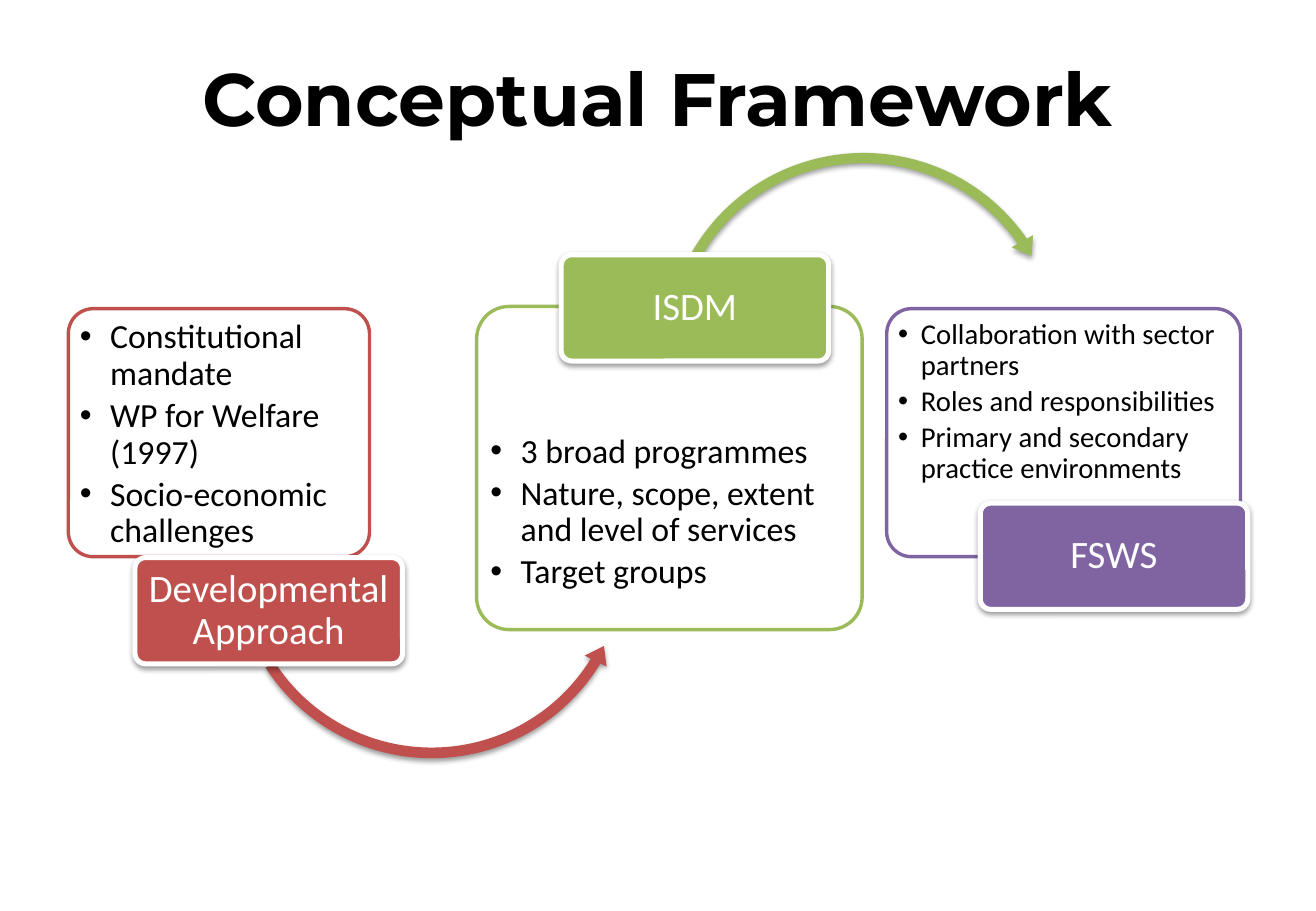
"""Build the Conceptual Framework slide: three linked stages with labels and arrows."""
import pptx
import pptx.dml.color
import pptx.enum.shapes
import pptx.enum.text
import pptx.oxml
import pptx.util

Pt = pptx.util.Pt
MSO = pptx.enum.shapes.MSO_SHAPE
ALIGN = pptx.enum.text.PP_ALIGN
ANCHOR = pptx.enum.text.MSO_ANCHOR
RGB = pptx.dml.color.RGBColor.from_string
NS = 'xmlns:a="http://schemas.openxmlformats.org/drawingml/2006/main"'
SHADOW = (f'<a:outerShdw {NS} blurRad="40000" dist="20000" dir="5400000" rotWithShape="0">'
          '<a:srgbClr val="000000"><a:alpha val="38000"/></a:srgbClr></a:outerShdw>')


def add_text(sp, text, size, color="000000", font="Calibri", bold=False, align=ALIGN.CENTER,
             anchor=ANCHOR.MIDDLE, insets=(3.5, 2.3, 3.5, 2.3), spacing=0.9, after=0, indent=0):
    tf = sp.text_frame
    tf.word_wrap = True
    tf.vertical_anchor = anchor
    tf.margin_left, tf.margin_top, tf.margin_right, tf.margin_bottom = map(Pt, insets)
    for i, line in enumerate(text.split("\n")):
        p = tf.paragraphs[0] if i == 0 else tf.add_paragraph()
        p.alignment = align
        p.line_spacing = spacing
        p.space_after = Pt(after)
        if indent:
            pPr = p._p.get_or_add_pPr()
            pPr.set("marL", str(Pt(indent)))
            pPr.set("indent", str(-Pt(indent)))
            pPr.append(pptx.oxml.parse_xml(f'<a:buFont {NS} typeface="Arial"/>'))
            pPr.append(pptx.oxml.parse_xml(f'<a:buChar {NS} char="•"/>'))
        r = p.add_run()
        r.text = line
        r.font.name = font
        r.font.size = Pt(size)
        r.font.bold = bold
        r.font.color.rgb = RGB(color)


def add_shape(kind, box, adjustments, fill, line=None, width=0, shadow=True):
    sp = s.shapes.add_shape(kind, *map(Pt, box))
    for i, value in enumerate(adjustments):
        sp.adjustments[i] = value
    sp.fill.solid()
    sp.fill.fore_color.rgb = RGB(fill)
    if line:
        sp.line.color.rgb = RGB(line)
        sp.line.width = Pt(width)
    else:
        sp.line.fill.background()
    sp.shadow.inherit = False
    if shadow:
        sp._element.spPr.effectLst.append(pptx.oxml.parse_xml(SHADOW))
    return sp


prs = pptx.Presentation()
prs.slide_width, prs.slide_height = Pt(780), Pt(540)
s = prs.slides.add_slide(prs.slide_layouts[6])

title = s.shapes.add_textbox(Pt(66), Pt(21.6), Pt(648), Pt(72))
add_text(title, "Conceptual Framework", 44, font="Montserrat", bold=True, spacing=1)

stages = [
    dict(color="C0504D", label="Developmental Approach", label_at=(80, 330.5),
         body=(40.5, 183, 178.5, 147), size=20, indent=18, top=2.3,
         points="Constitutional mandate\nWP for Welfare (1997)\nSocio-economic challenges",
         arrow=(MSO.LEFT_CIRCULAR_ARROW, (134.6, 211, 242.6, 242.6),
                (0.026, 3.096, 18.917, 88.31, 0.03))),
    dict(color="9BBB59", label="ISDM", label_at=(332.6, 151),
         body=(282.5, 181.7, 228.5, 191.5), size=20, indent=18, top=70,
         points="3 broad programmes\nNature, scope, extent and level of services\nTarget groups",
         arrow=(MSO.CIRCULAR_ARROW, (390.2, 86.4, 243.4, 243.4),
                (0.025, 3.083, 195.189, 125.782, 0.03))),
    dict(color="8064A2", label="FSWS", label_at=(581, 298.2),
         body=(525.6, 183, 209.7, 147), size=17, indent=13.5, top=2.3,
         points="Collaboration with sector partners\nRoles and responsibilities\n"
                "Primary and secondary practice environments",
         arrow=None),
]

for stage in stages:
    color, size = stage["color"], stage["size"]
    body = add_shape(MSO.ROUNDED_RECTANGLE, stage["body"], [0.1], "FFFFFF", color, 2, shadow=False)
    add_text(body, stage["points"], size, align=ALIGN.LEFT, anchor=ANCHOR.TOP,
             insets=(2.5, stage["top"], 2.5, 2.3), after=round(size * 0.17, 1),
             indent=stage["indent"])
    if stage["arrow"]:
        add_shape(*stage["arrow"], color)
    label = add_shape(MSO.ROUNDED_RECTANGLE, (*stage["label_at"], 158.6, 63), [0.1],
                      color, "FFFFFF", 3)
    add_text(label, stage["label"], 23, color="FFFFFF")

prs.save("out.pptx")
